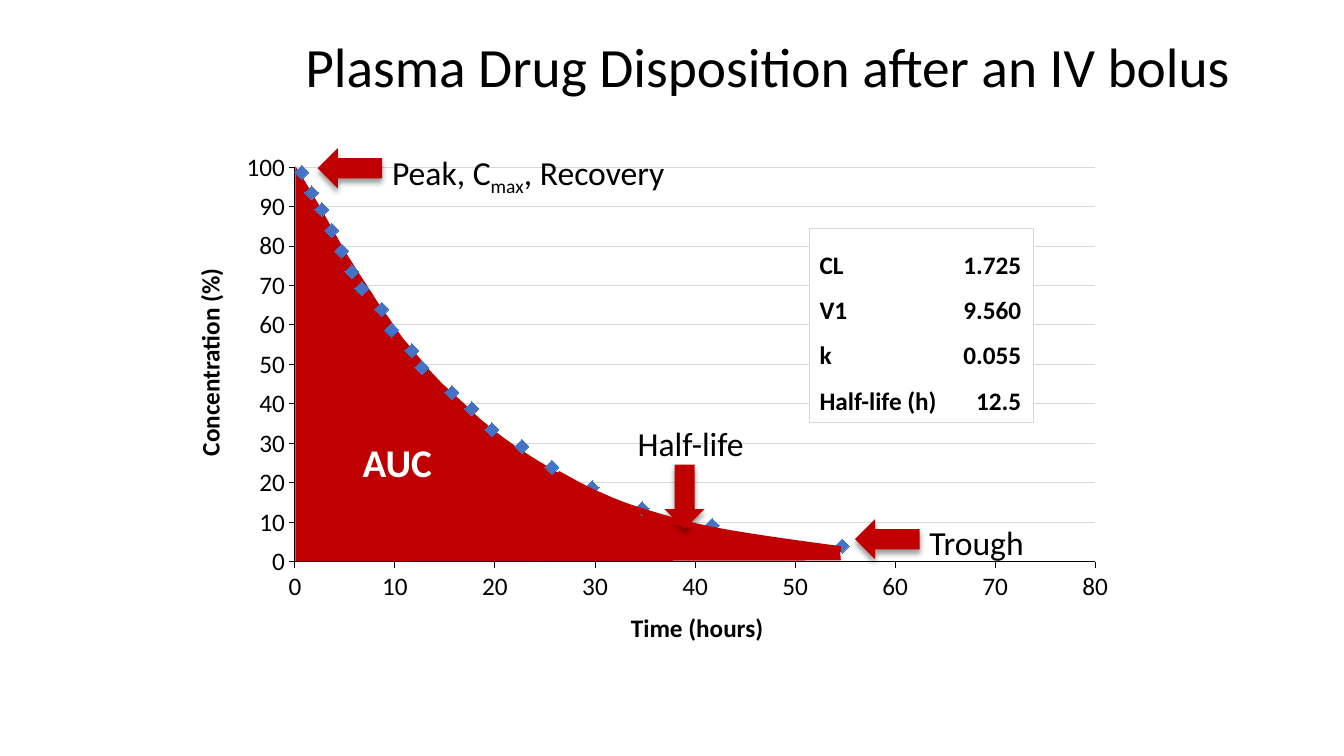
from dataclasses import dataclass
from lxml import etree
from pptx import Presentation
from pptx import util as u
from pptx.chart.data import XyChartData
from pptx.dml.color import RGBColor
from pptx.enum import chart as ch, shapes, text
from pptx.oxml import parse_xml
from pptx.oxml.ns import nsdecls, qn


@dataclass(frozen=True)
class Theme:
    font: str = "Calibri"
    black: RGBColor = RGBColor(0, 0, 0)
    white: RGBColor = RGBColor(255, 255, 255)
    red: RGBColor = RGBColor(0xC0, 0, 0)
    blue: RGBColor = RGBColor(0x44, 0x72, 0xC4)
    grid: RGBColor = RGBColor(0xD9, 0xD9, 0xD9)
    title: float = 39.6
    auc: float = 28
    label: float = 24
    body: float = 18
    hairline: float = 0.75
    curve: float = 4.5


HOURS = [84, 55, 42, 35, 30, 26, 23, 20, 18, 16, 13, 12, 10, 9, 7, 6, 5, 4, 3, 2, 1, 0]
SCALE = [1, *range(5, 40, 5), 40, 44, *range(50, 110, 5)]
MEASURED = [1, 5, 10, 14, 19, 24, 29, 33, 38, 42, 48, 52, 57, 62, 67, 71, 76, 81,
            86, 90, 95, 100]
PLOT = {"x": 0.081, "y": 0.044, "w": 0.887, "h": 0.828}

AUC_START = (8.33, 5.44)
AUC_STEPS = [
    (8.09, 5.41, 7.48, 5.35, 7.06, 5.25), (6.64, 5.15, 6.06, 4.99, 5.8, 4.85),
    (5.6, 4.73, 5.54, 4.69, 5.42, 4.62), (5.3, 4.55, 5.19, 4.48, 5.09, 4.41),
    (4.99, 4.34, 4.91, 4.28, 4.83, 4.21), (4.75, 4.15, 4.67, 4.07, 4.6, 4),
    (4.52, 3.93, 4.45, 3.86, 4.38, 3.8), (4.32, 3.73, 4.27, 3.69, 4.21, 3.61),
    (4.15, 3.54, 4.07, 3.44, 4, 3.36), (3.94, 3.28, 3.89, 3.2, 3.84, 3.13),
    (3.79, 3.06, 3.77, 3.04, 3.71, 2.94), (3.64, 2.83, 3.57, 2.73, 3.44, 2.52),
    (3.31, 2.3, 3.12, 1.94, 2.93, 1.65), (2.93, 5.57), (8.34, 5.56),
]
TAIL_START = (8.34, 5.45)
TAIL_STEPS = [
    (7.89, 5.39, 7.45, 5.33, 7.13, 5.27), (6.81, 5.21, 6.62, 5.15, 6.42, 5.09),
    (6.22, 5.03, 6.09, 4.98, 5.94, 4.91), (5.79, 4.85, 5.59, 4.73, 5.53, 4.7),
]


class Deck:
    def __init__(self, theme):
        self.theme = theme
        self.prs = Presentation()
        self.prs.slide_width, self.prs.slide_height = u.Inches(13.33), u.Inches(7.5)
        self.slide = self.prs.slides.add_slide(self.prs.slide_layouts[6])

    def box(self, at):
        return [u.Inches(v) for v in at]

    def run(self, p, words, size, color, bold=False):
        r = p.add_run()
        r.text = words
        r.font.name, r.font.size, r.font.bold = self.theme.font, u.Pt(size), bold
        r.font.color.rgb = color
        return r

    def label(self, at, runs, size=None, color=None, bold=False, center=False,
              spacing=1.1, vertical=False, anchor=text.MSO_ANCHOR.TOP):
        tf = self.slide.shapes.add_textbox(*self.box(at)).text_frame
        tf.word_wrap, tf.vertical_anchor = False, anchor
        if vertical:
            tf._txBody.bodyPr.set("vert", "vert270")
        p = tf.paragraphs[0]
        p.line_spacing = spacing
        p.alignment = text.PP_ALIGN.CENTER if center else text.PP_ALIGN.LEFT
        for words, baseline in runs:
            r = self.run(p, words, size or self.theme.label, color or self.theme.black, bold)
            if baseline:
                r.font._element.set("baseline", str(baseline * 1000))

    def arrow(self, left, top, rotation=0):
        sp = self.slide.shapes.add_shape(shapes.MSO_SHAPE.DOWN_ARROW,
                                         *self.box((left, top, 0.4, 0.64)))
        sp.rotation = rotation
        sp.fill.solid()
        sp.fill.fore_color.rgb = self.theme.red
        sp.line.fill.background()
        sp.shadow.inherit = False
        sp._element.spPr.find(qn("a:effectLst")).append(parse_xml(
            f'<a:outerShdw {nsdecls("a")} blurRad="{u.Pt(4)}" dist="{u.Pt(3)}" '
            'dir="5400000" rotWithShape="0"><a:srgbClr val="000000">'
            '<a:alpha val="40000"/></a:srgbClr></a:outerShdw>'))

    def outline(self, start, steps, filled):
        fb = self.slide.shapes.build_freeform(*self.box(start))
        fb.add_line_segments([self.box(step[-2:]) for step in steps], close=filled)
        sp = fb.convert_to_shape()
        segments = sp._element.spPr.findall(".//" + qn("a:lnTo"))
        for segment, step in zip(segments, steps):
            if len(step) == 6:
                segment.tag = qn("a:cubicBezTo")
                for i in (0, 2):
                    x, y = self.box(step[i:i + 2])
                    segment.insert(i // 2, segment.makeelement(
                        qn("a:pt"), {"x": str(x - sp.left), "y": str(y - sp.top)}))
        sp.shadow.inherit = False
        if filled:
            sp.fill.solid()
            sp.fill.fore_color.rgb = self.theme.red
            sp.line.fill.background()
        else:
            sp.fill.background()
            sp.line.color.rgb, sp.line.width = self.theme.red, u.Pt(self.theme.curve)

    def parameters(self, at, rows):
        th = self.theme
        sp = self.slide.shapes.add_shape(shapes.MSO_SHAPE.RECTANGLE, *self.box(at))
        sp.shadow.inherit = False
        sp.fill.solid()
        sp.fill.fore_color.rgb = th.white
        sp.line.color.rgb, sp.line.width = th.grid, u.Pt(th.hairline)
        tf = sp.text_frame
        tf.word_wrap, tf.vertical_anchor = True, text.MSO_ANCHOR.TOP
        for i, (name, value) in enumerate(rows):
            p = tf.add_paragraph() if i else tf.paragraphs[0]
            p.alignment, p.line_spacing = text.PP_ALIGN.LEFT, 1.5
            tabs = etree.SubElement(p._p.get_or_add_pPr(), qn("a:tabLst"))
            etree.SubElement(tabs, qn("a:tab"), pos=str(u.Inches(2)), algn="r")
            self.run(p, f"{name}\t{value}", th.body, th.black, True)

    def scatter(self, at, values, top, axes):
        th = self.theme
        data = XyChartData()
        series = data.add_series("Series 1")
        for x, y in zip(HOURS, values):
            series.add_data_point(x, y)
        chart = self.slide.shapes.add_chart(ch.XL_CHART_TYPE.XY_SCATTER,
                                            *self.box(at), data).chart
        chart.has_legend = chart.has_title = False
        chart.font.name, chart.font.size = th.font, u.Pt(th.body)
        chart.font.color.rgb = th.black
        plot = chart.plots[0]
        plot.vary_by_categories = False
        s = plot.series[0]
        s.smooth = False
        s.format.line.fill.background()
        s.marker.style = ch.XL_MARKER_STYLE.NONE if axes else ch.XL_MARKER_STYLE.DIAMOND
        if not axes:
            s.marker.size = 10
            s.marker.format.fill.solid()
            s.marker.format.fill.fore_color.rgb = th.blue
            s.marker.format.line.color.rgb = th.blue
        for axis, limit in ((chart.category_axis, 80), (chart.value_axis, top)):
            axis.minimum_scale, axis.maximum_scale, axis.major_unit = 0, limit, 10
            axis.has_major_gridlines = False
            axis.visible = axes
            axis.major_tick_mark = ch.XL_TICK_MARK.OUTSIDE
            axis.minor_tick_mark = ch.XL_TICK_MARK.NONE
            axis.format.line.color.rgb = th.black
            axis.format.line.width = u.Pt(th.hairline)
            axis.tick_labels.number_format = "#,##0"
            axis.tick_labels.number_format_is_linked = False
        if axes:
            line = chart.value_axis.major_gridlines.format.line
            line.color.rgb, line.width = th.grid, u.Pt(th.hairline)
        area = chart._chartSpace.find(".//" + qn("c:plotArea"))
        for old in area.findall(qn("c:layout")):
            area.remove(old)
        modes = "".join(f'<c:{k}Mode val="edge"/>' for k in "xy")
        sizes = "".join(f'<c:{k} val="{v}"/>' for k, v in PLOT.items())
        area.insert(0, parse_xml(
            f'<c:layout {nsdecls("c")}><c:manualLayout><c:layoutTarget val="inner"/>'
            f'{modes}{sizes}</c:manualLayout></c:layout>'))


def main():
    th = Theme()
    d = Deck(th)
    d.scatter((2.2, 1.45, 8.95, 4.73), SCALE, 100, axes=True)
    d.label((2.93, 0.28, 9.91, 0.81), [("Plasma Drug Disposition after an IV bolus", 0)],
            th.title, spacing=0.9, anchor=text.MSO_ANCHOR.MIDDLE)
    d.label((6.05, 6, 1.73, 0.43), [("Time (hours)", 0)], th.body, bold=True, center=True)
    d.label((1.85, 2.46, 0.54, 2.27), [("Concentration (%)", 0)], th.body, bold=True,
            center=True, vertical=True)
    d.parameters((8.03, 2.27, 2.22, 1.92), [("CL", "1.725"), ("V1", "9.560"),
                                            ("k", "0.055"), ("Half-life (h)", "12.5")])
    d.arrow(3.27, 1.35, 90)
    d.label((3.79, 1.41, 3.43, 0.55), [("Peak, C", 0), ("max", -25), (", Recovery", 0)])
    d.arrow(8.6, 5.03, 90)
    d.label((9.12, 5.09, 1.26, 0.55), [("Trough", 0)])
    d.outline(AUC_START, AUC_STEPS, filled=True)
    d.label((3.49, 4.25, 0.9, 0.59), [("AUC", 0)], th.auc, th.white, True, True)
    d.arrow(6.59, 4.61)
    d.label((6.18, 4.11, 1.34, 0.55), [("Half-life", 0)], center=True)
    d.scatter((2.17, 1.5, 8.95, 4.73), MEASURED, 95, axes=False)
    d.outline(TAIL_START, TAIL_STEPS, filled=False)
    d.prs.save("out.pptx")


if __name__ == "__main__":
    main()
